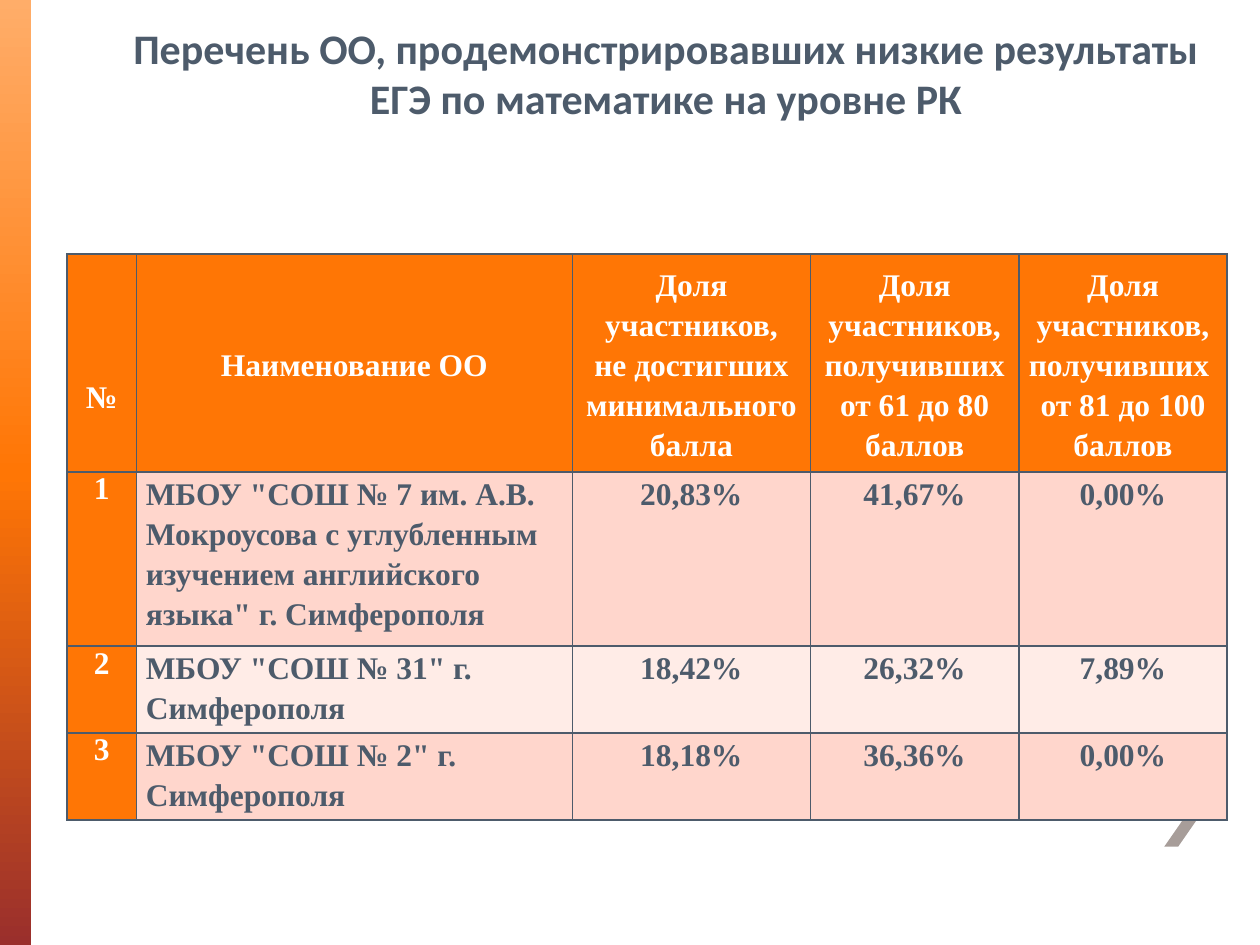
from copy import deepcopy

from lxml.etree import SubElement
from pptx import Presentation
from pptx.dml.color import RGBColor
from pptx.enum.shapes import MSO_SHAPE
from pptx.enum.text import MSO_ANCHOR, PP_ALIGN
from pptx.oxml.ns import qn
from pptx.util import Cm, Pt

ORANGE, SLATE, WHITE = "FF7605", "4D5B6B", "FFFFFF"
BANDS = ["FFD6CC", "FFECE7"]

COLUMN_WIDTHS = [1.4, 8.79, 4.8, 4.2, 4.2]
ROW_HEIGHTS = [4.39, 3.51, 1.75, 1.75]
HEADINGS = [
    "№",
    "Наименование ОО",
    "Доля участников,\nне достигших минимального балла",
    "Доля участников, получивших от 61 до 80 баллов",
    "Доля участников, получивших \nот 81 до 100 баллов",
]
SCHOOLS = [
    ["1", 'МБОУ "СОШ № 7 им. А.В. Мокроусова с углубленным изучением '
          'английского языка" г. Симферополя', "20,83%", "41,67%", "0,00%"],
    ["2", 'МБОУ "СОШ № 31" г. Симферополя', "18,42%", "26,32%", "7,89%"],
    ["3", 'МБОУ "СОШ № 2" г. Симферополя', "18,18%", "36,36%", "0,00%"],
]


def colour(code):
    return RGBColor.from_string(code)


def write(frame, text, font="Times New Roman", size=18, ink=SLATE,
          align=PP_ALIGN.CENTER, spacing=None, indent=None):
    frame.word_wrap = True
    paragraph = frame.paragraphs[0]
    paragraph.text = text
    paragraph.alignment = align
    if spacing:
        paragraph.line_spacing = spacing
    if indent:
        paragraph._p.get_or_add_pPr().set("marL", str(indent))
    for run in paragraph.runs:
        run.font.name = font
        run.font.size = Pt(size)
        run.font.bold = True
        run.font.color.rgb = colour(ink)


class Page:
    def __init__(self, slide, rule=SLATE, rule_width=1):
        self.slide = slide
        self.rule = rule
        self.rule_width = rule_width

    def gradient_bar(self, left, top, width, height, stops):
        bar = self.slide.shapes.add_shape(
            MSO_SHAPE.RECTANGLE, Cm(left), Cm(top), Cm(width), Cm(height))
        bar.shadow.inherit = False
        bar.line.fill.background()
        bar.fill.gradient()
        bar.fill.gradient_angle = 270
        first = next(bar._element.spPr.iter(qn("a:gs")))
        first.addnext(deepcopy(first))
        for stop, (position, code) in zip(bar.fill.gradient_stops, stops):
            stop.position = position
            stop.color.rgb = colour(code)

    def outline(self, points, code):
        start, *rest = [(Cm(x), Cm(y)) for x, y in points]
        builder = self.slide.shapes.build_freeform(*start)
        builder.add_line_segments(rest, close=True)
        figure = builder.convert_to_shape()
        figure.shadow.inherit = False
        figure.fill.solid()
        figure.fill.fore_color.rgb = colour(code)
        figure.line.fill.background()

    def title(self, text, left, top, width, height):
        box = self.slide.shapes.add_textbox(Cm(left), Cm(top), Cm(width), Cm(height))
        write(box.text_frame, text, font="Calibri", size=24, indent=Cm(1.27))

    def cell(self, cell, text, fill, anchor=MSO_ANCHOR.TOP, **style):
        cell.margin_left = cell.margin_right = Cm(0.19)
        cell.margin_top = cell.margin_bottom = 0
        cell.vertical_anchor = anchor
        properties = cell._tc.get_or_add_tcPr()
        for side in ("a:lnL", "a:lnR", "a:lnT", "a:lnB"):
            line = SubElement(properties, qn(side), w=str(Pt(self.rule_width)))
            SubElement(SubElement(line, qn("a:solidFill")), qn("a:srgbClr"), val=self.rule)
        cell.fill.solid()
        cell.fill.fore_color.rgb = colour(fill)
        write(cell.text_frame, text, **style)

    def results(self, left, top):
        grid = self.slide.shapes.add_table(
            len(ROW_HEIGHTS), len(COLUMN_WIDTHS), Cm(left), Cm(top),
            Cm(sum(COLUMN_WIDTHS)), Cm(sum(ROW_HEIGHTS))).table
        for column, width in zip(grid.columns, COLUMN_WIDTHS):
            column.width = Cm(width)
        for row, height in zip(grid.rows, ROW_HEIGHTS):
            row.height = Cm(height)
        for c, heading in enumerate(HEADINGS):
            self.cell(grid.cell(0, c), heading, ORANGE, MSO_ANCHOR.MIDDLE,
                      ink=WHITE, spacing=1.15)
        grid.cell(0, 0).margin_top = Cm(1.29)
        for r, (number, school, *shares) in enumerate(SCHOOLS, 1):
            band = BANDS[(r - 1) % 2]
            self.cell(grid.cell(r, 0), number, ORANGE, ink=WHITE)
            self.cell(grid.cell(r, 1), school, band, align=PP_ALIGN.LEFT, spacing=1.15)
            for c, share in enumerate(shares, 2):
                self.cell(grid.cell(r, c), share, band, spacing=1.15)


def main():
    deck = Presentation()
    deck.slide_width, deck.slide_height = Cm(25.4), Cm(19.05)
    page = Page(deck.slides.add_slide(deck.slide_layouts[6]))
    page.gradient_bar(0, 0, 0.63, 19.05, [(0, "FFAD69"), (0.5, ORANGE), (1, "9A2F2C")])
    page.outline([(23.75, 15.88), (23.47, 15.88), (23.88, 16.48),
                  (23.47, 17.07), (23.75, 17.07), (24.16, 16.48)], "A79D99")
    page.title("Перечень ОО, продемонстрировавших низкие результаты "
               "ЕГЭ по математике на уровне РК", 0.89, 0.33, 23.8, 2.31)
    page.results(1.35, 5.12)
    deck.save("out.pptx")


if __name__ == "__main__":
    main()
